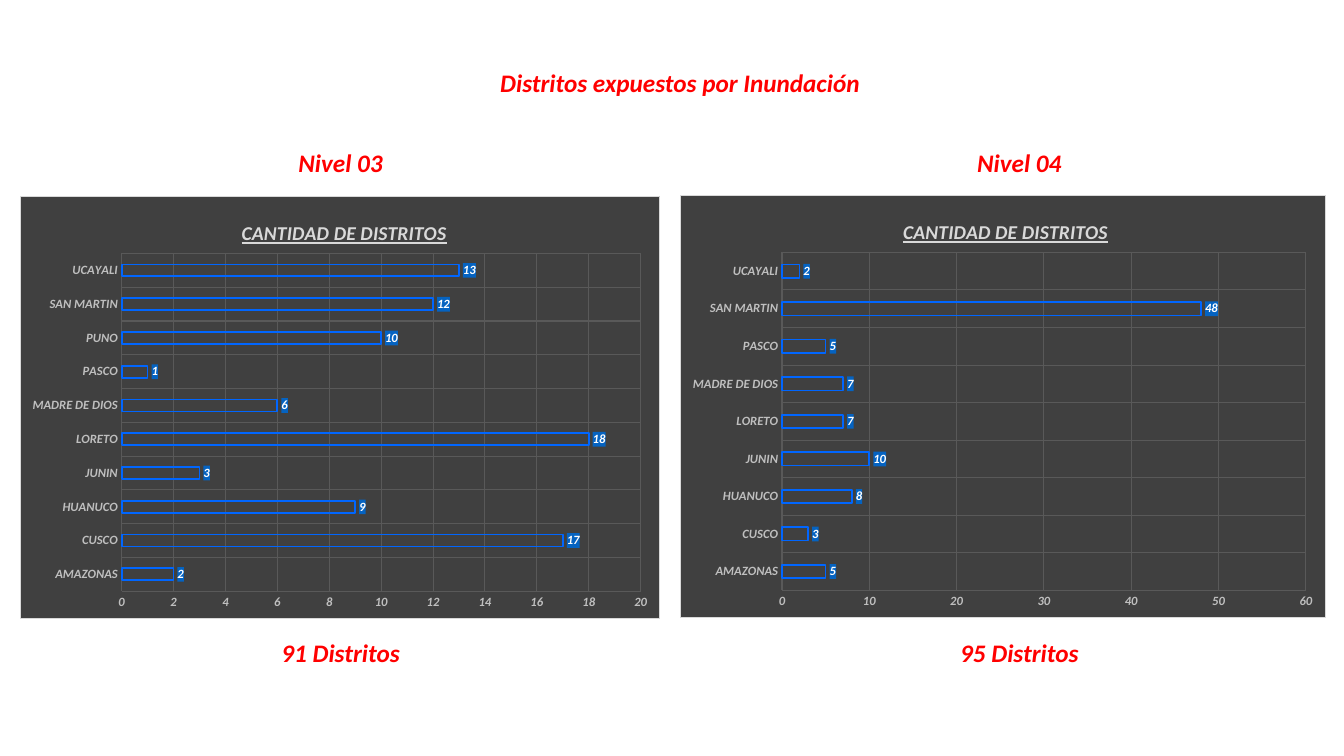
from pptx import Presentation
from pptx import util as u
from pptx.chart.data import CategoryChartData
from pptx.dml.color import RGBColor
from pptx.enum import chart as ch, text
from pptx.oxml import parse_xml
from pptx.oxml.ns import nsdecls

RED = RGBColor(0xFF, 0x00, 0x00)
WHITE = RGBColor(0xFF, 0xFF, 0xFF)
BLUE = RGBColor(0x00, 0x66, 0xFF)
LABEL_BLUE = RGBColor(0x05, 0x63, 0xC1)
DARK = RGBColor(0x40, 0x40, 0x40)
GRID = RGBColor(0x59, 0x59, 0x59)
AXIS_TEXT = RGBColor(0xBF, 0xBF, 0xBF)
LIGHT = RGBColor(0xD9, 0xD9, 0xD9)


def shape_props(fill, line=None):
    outline = f'<a:ln w="9525"><a:solidFill><a:srgbClr val="{line}"/></a:solidFill></a:ln>' if line else ''
    return parse_xml(f'<c:spPr {nsdecls("c", "a")}><a:solidFill><a:srgbClr val="{fill}"/>'
                     f'</a:solidFill>{outline}</c:spPr>')


def manual_layout(x, y, w=None, h=None):
    target = '<c:layoutTarget val="inner"/>' if w else ''
    size = f'<c:w val="{w}"/><c:h val="{h}"/>' if w else ''
    return parse_xml(f'<c:layout {nsdecls("c")}><c:manualLayout>{target}<c:xMode val="edge"/>'
                     f'<c:yMode val="edge"/><c:x val="{x}"/><c:y val="{y}"/>{size}'
                     f'</c:manualLayout></c:layout>')


class Deck:
    font = 'Calibri'

    def __init__(self):
        self.prs = Presentation()
        self.prs.slide_width, self.prs.slide_height = u.Inches(13.33), u.Inches(7.5)
        self.s = self.prs.slides.add_slide(self.prs.slide_layouts[6])

    def box(self, x, y, w, h):
        width, height = self.prs.slide_width, self.prs.slide_height
        return [int(share * side / 100) for share, side in zip((x, y, w, h), (width, height) * 2)]

    def style(self, font, size, color):
        font.name, font.size, font.color.rgb = self.font, u.Pt(size), color
        font.bold = font.italic = True

    def caption(self, wording, center, y, w, wrap=True):
        sp = self.s.shapes.add_textbox(*self.box(center - w / 2, y, w, 5.33))
        tf = sp.text_frame
        tf.word_wrap = wrap
        tf.auto_size = text.MSO_AUTO_SIZE.SHAPE_TO_FIT_TEXT
        p = tf.paragraphs[0]
        p.text, p.alignment = wording, text.PP_ALIGN.CENTER
        self.style(p.font, 18, RED)

    def axis(self, axis):
        axis.major_tick_mark = axis.minor_tick_mark = ch.XL_TICK_MARK.NONE
        axis.format.line.fill.background()
        axis.has_major_gridlines = True
        line = axis.major_gridlines.format.line
        line.color.rgb, line.width = GRID, u.Pt(0.75)
        self.style(axis.tick_labels.font, 9, AXIS_TEXT)

    def labels(self, plot):
        plot.has_data_labels = True
        labels = plot.data_labels
        labels.show_value = True
        labels.position = ch.XL_LABEL_POSITION.OUTSIDE_END
        labels.number_format, labels.number_format_is_linked = '#,##0', False
        self.style(labels.font, 9, WHITE)
        labels.font._element.getparent().getparent().getparent().addprevious(shape_props(LABEL_BLUE))

    def title(self, chart, wording):
        tf = chart.chart_title.text_frame
        p = tf.paragraphs[0]
        p.text = wording
        self.style(p.font, 14, LIGHT)
        p.font.underline = True
        chart.chart_title.include_in_layout = False
        title = chart.chart_title._element
        for old in title.xpath('c:layout'):
            title.remove(old)
        title.xpath('c:tx')[0].addnext(manual_layout(0.34, 0.047))

    def bars(self, districts, top, step, x, y, w):
        data = CategoryChartData(number_format='#,##0')
        data.categories = list(districts)
        data.add_series('Series 1', list(districts.values()))
        chart = self.s.shapes.add_chart(ch.XL_CHART_TYPE.BAR_CLUSTERED, *self.box(x, y, w, 56), data).chart
        chart.font.name, chart.font.size = self.font, u.Pt(10)
        chart.has_legend = False
        root = chart._chartSpace
        root.xpath('c:chart')[0].addnext(shape_props(DARK, LIGHT))
        self.title(chart, 'CANTIDAD DE DISTRITOS')
        self.axis(chart.category_axis)
        self.axis(chart.value_axis)
        chart.value_axis.minimum_scale, chart.value_axis.maximum_scale = 0, top
        chart.value_axis.major_unit = step
        plot = chart.plots[0]
        plot.gap_width, plot.overlap, plot.vary_by_categories = 182, -50, False
        bar = plot.series[0].format
        bar.fill.background()
        bar.line.color.rgb, bar.line.width = BLUE, u.Pt(1.25)
        self.labels(plot)
        area = root.xpath('c:chart/c:plotArea')[0]
        for old in area.xpath('c:layout'):
            area.remove(old)
        area.insert(0, manual_layout(0.158, 0.136, 0.812, 0.8))


def main():
    level_3 = {'AMAZONAS': 2, 'CUSCO': 17, 'HUANUCO': 9, 'JUNIN': 3, 'LORETO': 18,
               'MADRE DE DIOS': 6, 'PASCO': 1, 'PUNO': 10, 'SAN MARTIN': 12, 'UCAYALI': 13}
    level_4 = {'AMAZONAS': 5, 'CUSCO': 3, 'HUANUCO': 8, 'JUNIN': 10, 'LORETO': 7,
               'MADRE DE DIOS': 7, 'PASCO': 5, 'SAN MARTIN': 48, 'UCAYALI': 2}
    deck = Deck()
    deck.caption('Distritos expuestos por Inundación', 50.6, 8.27, 28.58, wrap=False)
    for level, districts, center, top, step, chart_box in (
            ('03', level_3, 25.35, 20, 2, (1.5, 25.87, 47.64)),
            ('04', level_4, 75.85, 60, 10, (50.56, 25.73, 48.09))):
        deck.caption(f'Nivel {level}', center, 18.8, 8.3)
        deck.caption(f'{sum(districts.values())} Distritos', center, 83.6, 11.5)
        deck.bars(districts, top, step, *chart_box)
    deck.prs.save("out.pptx")


if __name__ == "__main__":
    main()
